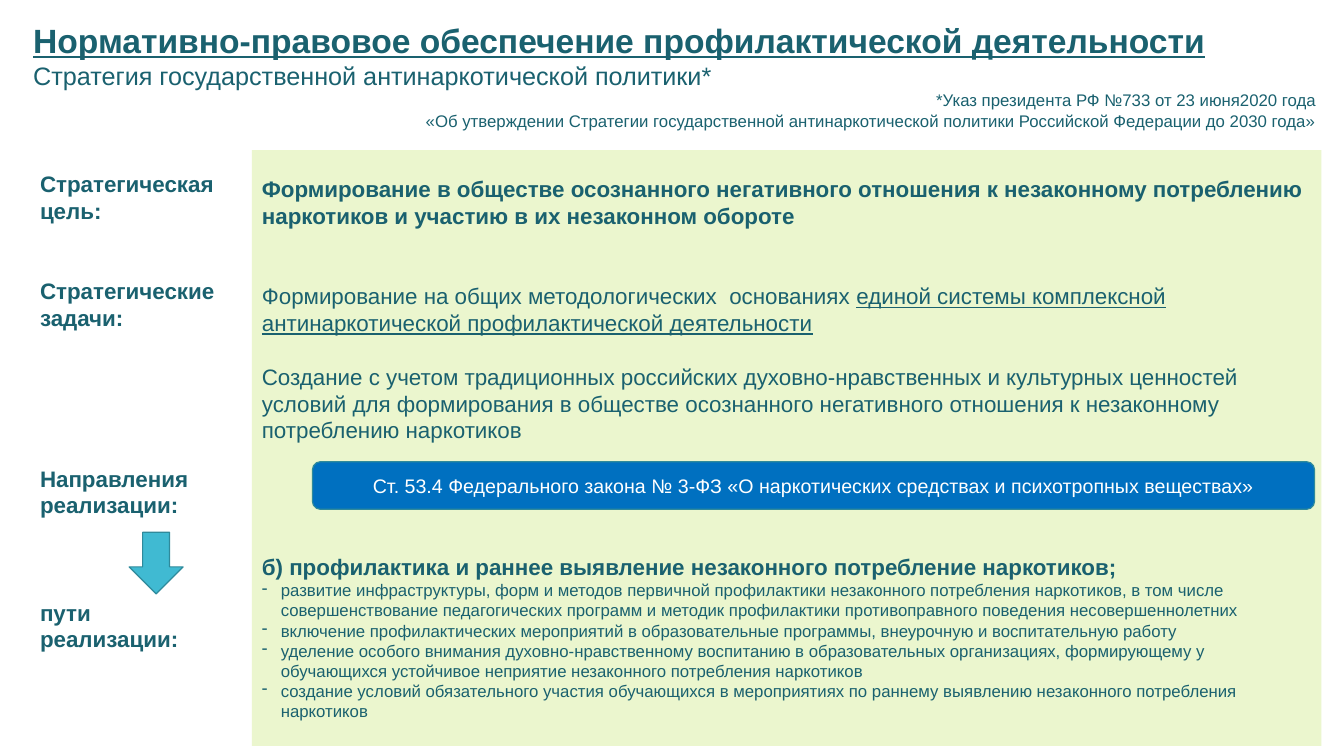
import pptx
import pptx.util
import pptx.dml.color
import pptx.enum.shapes
import pptx.enum.text
import pptx.oxml.ns
import lxml.etree

Pt = pptx.util.Pt
SHAPES = pptx.enum.shapes.MSO_SHAPE
ALIGN = pptx.enum.text.PP_ALIGN
COLOURS = {
    "text": "1A616F", "panel": "EBF6CE", "arrow": "40BAD2",
    "outline": "2F8A9B", "law": "0070C0", "white": "FFFFFF",
}
LINE = 19.1  # height of one 16 pt line, the unit for gaps between blocks


def colour(name):
    return pptx.dml.color.RGBColor.from_string(COLOURS[name])


def prepare_frame(shape):
    frame = shape.text_frame
    frame.word_wrap = True
    frame.auto_size = pptx.enum.text.MSO_AUTO_SIZE.NONE
    frame.vertical_anchor = pptx.enum.text.MSO_ANCHOR.MIDDLE
    return frame


def write(frame, text, size=16, bold=False, underline=False, ink="text",
          align=ALIGN.LEFT, gap=0, joined=False, dash=False):
    """Add a paragraph, or with joined=True a span to the last one."""
    para = frame.paragraphs[-1]
    if not joined:
        if para.runs:
            para = frame.add_paragraph()
        para.alignment = align
        para.space_before = Pt(gap)
    span = para.add_run()
    span.text = text
    font = span.font
    font.name, font.size, font.bold, font.underline = "Arial", Pt(size), bold, underline
    font.color.rgb = colour(ink)
    if dash:
        properties = para._p.get_or_add_pPr()
        properties.set("marL", str(Pt(13.5)))
        properties.set("indent", str(-Pt(13.5)))
        bullet = lxml.etree.SubElement(properties, pptx.oxml.ns.qn("a:buChar"))
        bullet.set("char", "-")


def add_block(page, kind, box, fill, outline=None):
    shape = page.shapes.add_shape(kind, *map(Pt, box))
    shape.shadow.inherit = False
    shape.fill.solid()
    shape.fill.fore_color.rgb = colour(fill)
    if outline:
        shape.line.color.rgb = colour(outline)
        shape.line.width = Pt(0.85)
    else:
        shape.line.fill.background()
    return shape


def add_heading(page, box):
    title = page.shapes.title
    title.left, title.top, title.width, title.height = map(Pt, box)
    frame = prepare_frame(title)
    write(frame, "Нормативно-правовое обеспечение профилактической деятельности",
          size=24, bold=True, underline=True)
    write(frame, "Стратегия государственной антинаркотической политики*", size=18)
    for note in (
        "*Указ президента РФ №733 от 23 июня2020 года",
        "«Об утверждении Стратегии государственной антинаркотической политики "
        "Российской Федерации до 2030 года»",
    ):
        write(frame, note, size=12, align=ALIGN.RIGHT)


def add_labels(page, box):
    left, top, width, height = box
    frame = prepare_frame(page.shapes.add_textbox(*map(Pt, box)))
    for text, lines_above in (
        ("Стратегическая цель:", 0),
        ("Стратегические задачи:", 2),
        ("Направления реализации:", 5),
        ("пути реализации:", 3),
    ):
        write(frame, text, bold=True, gap=lines_above * LINE)
    # Arrow from directions to ways
    add_block(page, SHAPES.DOWN_ARROW, (left + 70.8, top + 311.8, 38.5, 44),
              "arrow", "outline")


def add_strategy(page, box):
    left, top, width, height = box
    frame = prepare_frame(add_block(page, SHAPES.RECTANGLE, box, "panel"))
    # Goal and tasks
    write(frame, "Формирование в обществе осознанного негативного отношения к незаконному "
          "потреблению наркотиков и участию в их незаконном обороте", bold=True)
    write(frame, "Формирование на общих методологических  основаниях ", gap=2 * LINE)
    write(frame, "единой системы комплексной антинаркотической профилактической деятельности",
          underline=True, joined=True)
    write(frame, "Создание с учетом традиционных российских духовно-нравственных и культурных "
          "ценностей условий для формирования в обществе осознанного негативного отношения "
          "к незаконному потреблению наркотиков", gap=LINE)
    # Direction and ways
    write(frame, "б) профилактика и раннее выявление незаконного потребление наркотиков;",
          bold=True, gap=4.1 * LINE)
    for way in (
        "развитие инфраструктуры, форм и методов первичной профилактики незаконного "
        "потребления наркотиков, в том числе совершенствование педагогических программ "
        "и методик профилактики противоправного поведения несовершеннолетних",
        "включение профилактических мероприятий в образовательные программы, "
        "внеурочную и воспитательную работу",
        "уделение особого внимания духовно-нравственному воспитанию в образовательных "
        "организациях, формирующему у обучающихся устойчивое неприятие незаконного "
        "потребления наркотиков",
        "создание условий обязательного участия обучающихся в мероприятиях по раннему "
        "выявлению незаконного потребления наркотиков",
    ):
        write(frame, way, size=12, dash=True)
    # Law banner
    banner = add_block(page, SHAPES.ROUNDED_RECTANGLE,
                       (left + 43.2, top + 222.5, width - 48.2, 34), "law", "outline")
    write(prepare_frame(banner), "Ст. 53.4 Федерального закона № 3-ФЗ «О наркотических "
          "средствах и психотропных веществах»", size=14, ink="white", align=ALIGN.CENTER)


def main():
    deck = pptx.Presentation()
    deck.slide_width, deck.slide_height = Pt(960), Pt(540)
    page = deck.slides.add_slide(deck.slide_layouts.get_by_name("Title Only"))
    add_heading(page, (16.5, 0, 931, 107.3))
    add_labels(page, (21.5, 68.4, 142, 450.7))
    add_strategy(page, (180, 107.3, 764, 425.5))
    deck.save("out.pptx")


if __name__ == "__main__":
    main()
